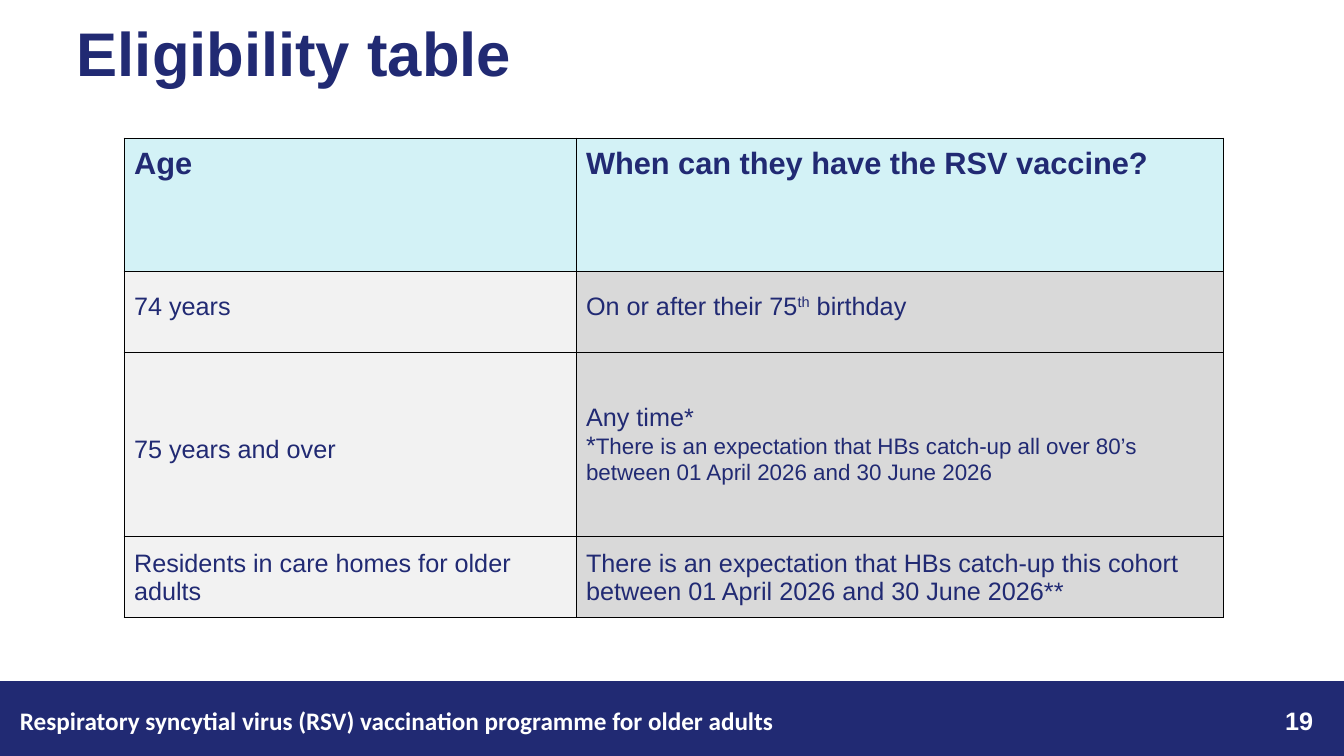
from lxml import etree
from pptx import Presentation
from pptx import util as u
from pptx.dml.color import RGBColor
from pptx.enum import shapes, text
from pptx.oxml import ns

NAVY, WHITE, BLACK = "212A73", "FFFFFF", "000000"
HEADER_FILL, AGE_FILL, TIMING_FILL = "D3F2F6", "F2F2F2", "D9D9D9"
LINE_HEIGHT = u.Pt(13.5)
COLUMNS = [452, 648]
ROWS = [133, 81, 185, 81]


def px(length):
    return u.Emu(round(length * 914400 / 100.8))


def color(value):
    return RGBColor.from_string(value)


def style(font, size, value, bold=False, name="Arial"):
    font.size, font.bold, font.name = u.Pt(size), bold, name
    font.color.rgb = color(value)


def add_label(slide, box, content, size, value, name="Arial",
              align=text.PP_ALIGN.LEFT, anchor=text.MSO_ANCHOR.TOP, spacing=1.0):
    frame = slide.shapes.add_textbox(*map(px, box)).text_frame
    frame.word_wrap = True
    frame.vertical_anchor = anchor
    frame.text = content
    paragraph = frame.paragraphs[0]
    paragraph.alignment = align
    paragraph.line_spacing = spacing
    style(paragraph.runs[0].font, size, value, True, name)


def add_borders(cell):
    properties = cell._tc.get_or_add_tcPr()
    for index, side in enumerate(("lnL", "lnR", "lnT", "lnB")):
        line = etree.Element(ns.qn(f"a:{side}"), w=str(u.Pt(0.75)))
        fill = etree.SubElement(line, ns.qn("a:solidFill"))
        etree.SubElement(fill, ns.qn("a:srgbClr"), val=BLACK)
        properties.insert(index, line)


def fill_cell(cell, pieces, fill, bold=False, line_height=None, top=5,
              anchor=text.MSO_ANCHOR.MIDDLE):
    cell.fill.solid()
    cell.fill.fore_color.rgb = color(fill)
    cell.vertical_anchor = anchor
    cell.margin_top = px(top)
    paragraph = cell.text_frame.paragraphs[0]
    paragraph.text = pieces[0][0]
    for content, *_ in pieces[1:]:
        paragraph.add_run().text = content
    if line_height:
        paragraph.line_spacing = line_height
    sizes = [pieces[0][1]] * (len(paragraph.runs) - len(pieces)) + [p[1] for p in pieces]
    for run, size in zip(paragraph.runs, sizes):
        style(run.font, size, NAVY, bold)
        if run.text == "th":
            run.font._element.set("baseline", "30000")
    add_borders(cell)


def add_eligibility_table(slide, left, top):
    frame = slide.shapes.add_table(len(ROWS), len(COLUMNS), px(left), px(top),
                                   px(sum(COLUMNS)), px(sum(ROWS)))
    table = frame.table
    for column, width in zip(table.columns, COLUMNS):
        column.width = px(width)
    for row, height in zip(table.rows, ROWS):
        row.height = px(height)

    for column, heading in enumerate(("Age", "When can they have the RSV vaccine?")):
        fill_cell(table.cell(0, column), [(heading, 22)], HEADER_FILL, True,
                  LINE_HEIGHT, 24, text.MSO_ANCHOR.TOP)

    ages = [
        ("74 years", LINE_HEIGHT, 5),
        ("75 years and over", LINE_HEIGHT, 24),
        ("Residents in care homes for older adults", None, 5),
    ]
    timings = [
        ([("On or after their 75", 18), ("th", 18), (" birthday", 18)], LINE_HEIGHT),
        ([("Any time*\v*", 18),
          ("There is an expectation that HBs catch-up all over 80’s "
           "between 01 April 2026 and 30 June 2026", 16)], None),
        ([("There is an expectation that HBs catch-up this cohort "
           "between 01 April 2026 and 30 June 2026**", 18)], None),
    ]
    for row, ((age, height, margin), (pieces, spacing)) in enumerate(zip(ages, timings), 1):
        fill_cell(table.cell(row, 0), [(age, 18)], AGE_FILL,
                  line_height=height, top=margin)
        fill_cell(table.cell(row, 1), pieces, TIMING_FILL, line_height=spacing)


def add_footer(slide, left, top, width, height):
    band = slide.shapes.add_shape(shapes.MSO_SHAPE.RECTANGLE,
                                  *map(px, (left, top, width, height)))
    band.shadow.inherit = False
    band.fill.solid()
    band.fill.fore_color.rgb = color(NAVY)
    band.line.color.rgb = color(NAVY)
    band.line.width = u.Pt(1)
    add_label(slide, (left + width - 323, top + 18, 302, 40), "19", 18, WHITE,
              align=text.PP_ALIGN.RIGHT)
    add_label(slide, (left + 10, top + 18, 1039, 44),
              "Respiratory syncytial virus (RSV) vaccination programme for older adults",
              18, WHITE, "Calibri")


def main():
    presentation = Presentation()
    presentation.slide_width, presentation.slide_height = px(1344), px(756)
    slide = presentation.slides.add_slide(presentation.slide_layouts[6])
    add_footer(slide, 0, 682, 1344, 74)
    add_label(slide, (67, 15, 1159, 83), "Eligibility table", 44, NAVY,
              anchor=text.MSO_ANCHOR.MIDDLE, spacing=0.9)
    add_eligibility_table(slide, 124, 138)
    presentation.save("out.pptx")


if __name__ == "__main__":
    main()
